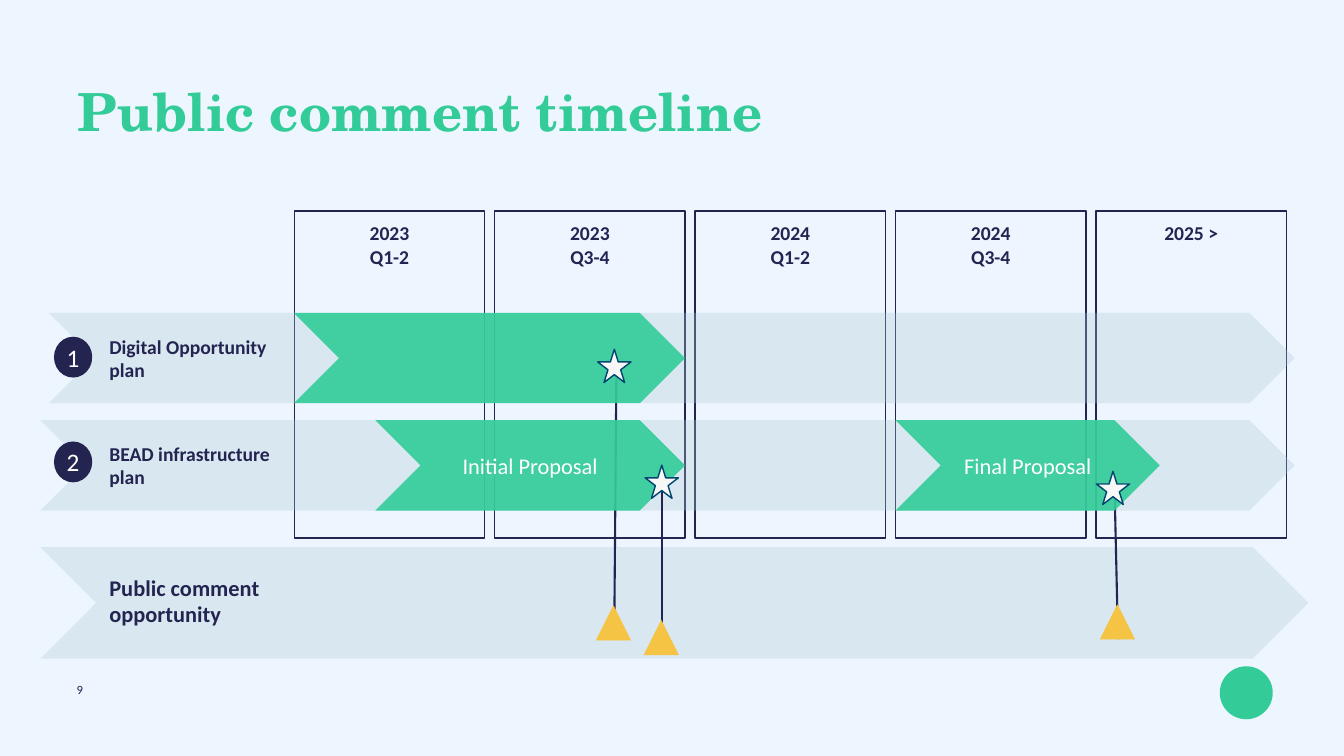
from pptx import Presentation
from pptx.dml.color import RGBColor
from pptx.enum.shapes import MSO_CONNECTOR, MSO_SHAPE
from pptx.enum.text import MSO_ANCHOR, PP_ALIGN
from pptx.oxml.ns import qn
from pptx.util import Cm, Pt
from lxml import etree

RECTANGLE, OVAL, CHEVRON = MSO_SHAPE.RECTANGLE, MSO_SHAPE.OVAL, MSO_SHAPE.CHEVRON
STAR, TRIANGLE = MSO_SHAPE.STAR_5_POINT, MSO_SHAPE.ISOSCELES_TRIANGLE
STRAIGHT = MSO_CONNECTOR.STRAIGHT
TOP, MIDDLE = MSO_ANCHOR.TOP, MSO_ANCHOR.MIDDLE
LEFT, CENTER = PP_ALIGN.LEFT, PP_ALIGN.CENTER

BACKGROUND = RGBColor(0xED, 0xF5, 0xFF)
NAVY = RGBColor(0x24, 0x24, 0x51)
GREEN = RGBColor(0x33, 0xCC, 0x99)
PALE = RGBColor(0xAB, 0xCD, 0xD0)
YELLOW = RGBColor(0xF5, 0xC4, 0x45)
STAR_FILL = RGBColor(0xF7, 0xF7, 0xF7)
STAR_LINE = RGBColor(0x00, 0x47, 0x70)
WHITE = RGBColor(0xFF, 0xFF, 0xFF)

# Content, all lengths in centimetres
TITLE = "Public comment timeline"
PAGE_NUMBER = "9"
QUARTERS = ["2023\nQ1-2", "2023\nQ3-4", "2024\nQ1-2", "2024\nQ3-4", "2025 >"]
QUARTER_LEFT, QUARTER_PITCH = 14.83, 10.1
QUARTER_TOP, QUARTER_WIDTH, QUARTER_HEIGHT = 10.64, 9.6, 16.48

ROW_HEIGHT = 4.55
PLAN_TOP, BEAD_TOP = 15.77, 21.18
# number, label, row top, band left, badge top
PLANS = [
    ("1", "Digital Opportunity plan", PLAN_TOP, 2.46, 16.97),
    ("2", "BEAD infrastructure plan", BEAD_TOP, 2.03, 22.25),
]
BAND_RIGHT = 65.25
LABEL_LEFT = 5.26
COMMENT_LABEL = "Public comment opportunity"
COMMENT_BAND = (2.03, 27.58, 63.91, 5.61)

# text, left, row top, width
PHASES = [
    ("", 14.81, PLAN_TOP, 19.71),
    ("Final Proposal", 45.14, BEAD_TOP, 13.31),
    ("Initial Proposal", 18.92, BEAD_TOP, 15.6),
]
# star corner, line start, line end, triangle corner
MILESTONES = [
    ((30.12, 17.6), (31.06, 19.05), (30.96, 31.27), (30.05, 30.53)),
    ((32.51, 23.44), (33.35, 24.66), (33.35, 31.47), (32.46, 31.27)),
    ((55.25, 23.75), (56.18, 25.15), (56.34, 32.21), (55.45, 30.48)),
]
STAR_SIZE, TRIANGLE_SIZE = 1.68, 1.73

presentation = Presentation()
presentation.slide_width, presentation.slide_height = Cm(67.73), Cm(38.1)
slide = presentation.slides.add_slide(presentation.slide_layouts[6])
slide.background.fill.solid()
slide.background.fill.fore_color.rgb = BACKGROUND


def write(shape, text, size=28, font="Calibri", color=NAVY, bold=False,
          align=LEFT, anchor=TOP, inset=None, spacing=None):
    frame = shape.text_frame
    frame.word_wrap = True
    frame.vertical_anchor = anchor
    if inset is not None:
        frame.margin_left = frame.margin_right = Cm(inset)
        frame.margin_top = frame.margin_bottom = Cm(inset)
    paragraph = frame.paragraphs[0]
    paragraph.text = text
    paragraph.alignment = align
    if spacing:
        paragraph.line_spacing = spacing
    for run in paragraph.runs:
        run.font.size, run.font.name, run.font.bold = Pt(size), font, bold
        run.font.color.rgb = color


def add_text(text, left, top, width, height, **style):
    box = slide.shapes.add_textbox(Cm(left), Cm(top), Cm(width), Cm(height))
    write(box, text, **style)


def add_figure(kind, left, top, width, height, fill=None, alpha=None, line=None, weight=2):
    shape = slide.shapes.add_shape(kind, Cm(left), Cm(top), Cm(width), Cm(height))
    shape.shadow.inherit = False
    if fill is None:
        shape.fill.background()
    else:
        shape.fill.solid()
        shape.fill.fore_color.rgb = fill
    if alpha:
        color = shape.element.spPr.find(qn("a:solidFill"))[0]
        etree.SubElement(color, qn("a:alpha")).set("val", str(alpha * 1000))
    if line is None:
        shape.line.fill.background()
    else:
        shape.line.color.rgb = line
        shape.line.width = Pt(weight)
    return shape


def add_line(start, end):
    connector = slide.shapes.add_connector(STRAIGHT, *map(Cm, start + end))
    connector.line.color.rgb = NAVY
    connector.line.width = Pt(3)
    etree.SubElement(connector.element.spPr, qn("a:effectLst"))


# Corner dot, title and page number
add_figure(OVAL, 61.47, 33.58, 2.67, 2.67, fill=GREEN)
add_text(TITLE, 3.68, 4.24, 60.35, 3.18, size=75, font="TeX Gyre Schola",
         color=GREEN, bold=True, spacing=0.9)
add_text(PAGE_NUMBER, 3.61, 34.34, 48.72, 0.94, size=18, spacing=0.9)

# Quarter columns
for index, quarter in enumerate(QUARTERS):
    column = add_figure(RECTANGLE, QUARTER_LEFT + index * QUARTER_PITCH, QUARTER_TOP,
                        QUARTER_WIDTH, QUARTER_HEIGHT, line=NAVY)
    write(column, quarter, bold=True, align=CENTER, inset=0.51)

# Plan rows with numbered badges
for number, label, top, left, badge_top in PLANS:
    add_figure(CHEVRON, left, top, BAND_RIGHT - left, ROW_HEIGHT, fill=PALE, alpha=30)
    add_text(label, LABEL_LEFT, top, 9.5, ROW_HEIGHT, bold=True, anchor=MIDDLE)
    badge = add_figure(OVAL, 2.72, badge_top, 1.93, 2.06, fill=NAVY)
    write(badge, number, size=36, color=WHITE, align=CENTER, anchor=MIDDLE, inset=0)

# Public comment row
add_figure(CHEVRON, *COMMENT_BAND, fill=PALE, alpha=30)
add_text(COMMENT_LABEL, LABEL_LEFT, 27.99, 10.34, ROW_HEIGHT, size=32, bold=True,
         anchor=MIDDLE)

# Milestone lines run behind the phases
for star, start, end, triangle in MILESTONES:
    add_line(start, end)

# Phases
for text, left, top, width in PHASES:
    phase = add_figure(CHEVRON, left, top, width, ROW_HEIGHT, fill=GREEN, alpha=91)
    if text:
        write(phase, text, size=32, color=WHITE, align=CENTER, anchor=MIDDLE)

# Milestone stars and comment triangles
for star, start, end, triangle in MILESTONES:
    add_figure(STAR, *star, STAR_SIZE, STAR_SIZE, fill=STAR_FILL, line=STAR_LINE)
    add_figure(TRIANGLE, *triangle, TRIANGLE_SIZE, TRIANGLE_SIZE,
               fill=YELLOW, line=YELLOW, weight=0.75)

presentation.save("out.pptx")
